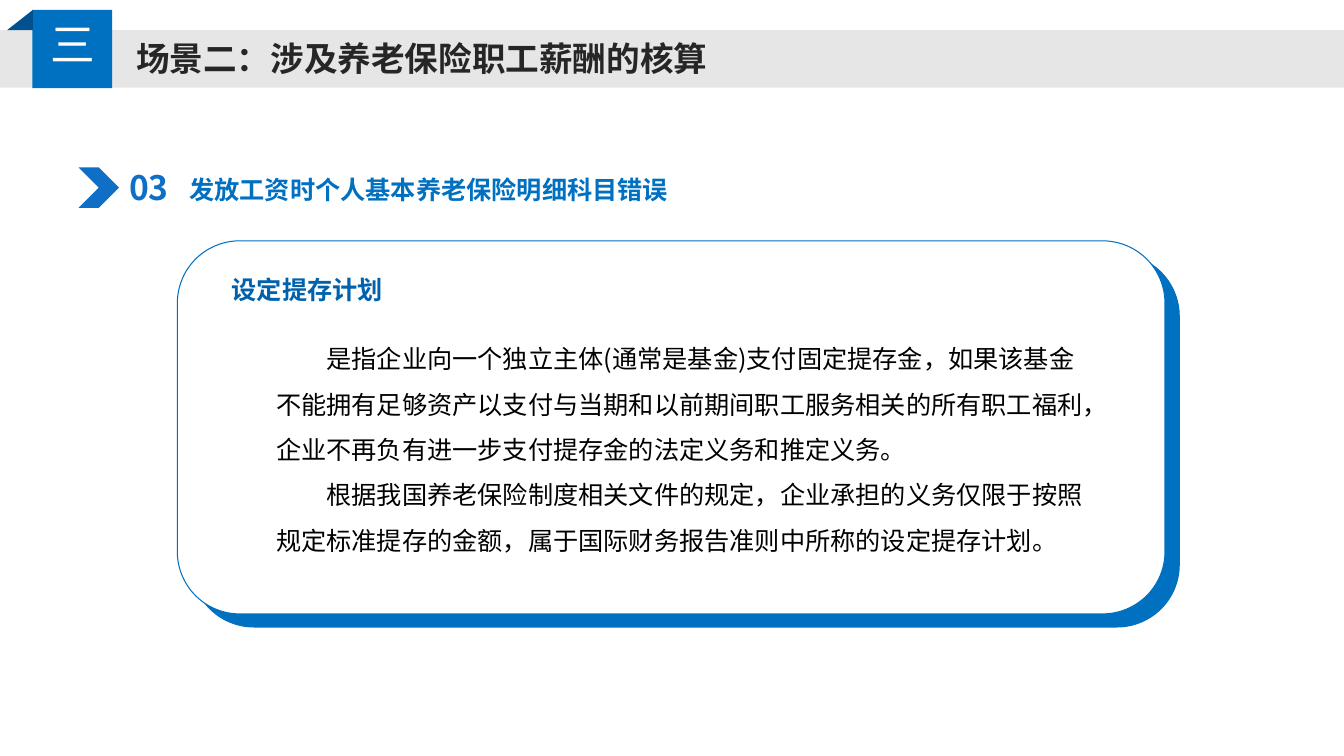
from lxml.etree import SubElement
from pptx import Presentation
from pptx.dml.color import RGBColor
from pptx.enum.shapes import MSO_SHAPE
from pptx.enum.text import MSO_ANCHOR, PP_ALIGN
from pptx.oxml.ns import qn
from pptx.util import Cm, Pt

COLORS = {
    "blue": "0070C0",
    "fold": "00518E",
    "accent": "0F6FC6",
    "heading": "0062AC",
    "bar": "E6E6E6",
    "title": "262626",
    "white": "FFFFFF",
    "black": "000000",
}


class SlideBuilder:
    """Draws styled shapes and text on one slide."""

    font = "Noto Sans CJK SC"

    def __init__(self, slide):
        self.shapes = slide.shapes

    def color(self, name):
        return RGBColor.from_string(COLORS[name])

    def paint(self, sp, fill, line=None):
        sp.shadow.inherit = False
        sp.fill.solid()
        sp.fill.fore_color.rgb = self.color(fill)
        if line:
            sp.line.color.rgb = self.color(line)
            sp.line.width = Pt(0.75)
        else:
            sp.line.fill.background()

    def shape(self, kind, box, fill, line=None):
        sp = self.shapes.add_shape(kind, *map(Cm, box))
        self.paint(sp, fill, line)
        return sp

    def polygon(self, points, fill):
        start, *rest = [(Cm(x), Cm(y)) for x, y in points]
        builder = self.shapes.build_freeform(*start)
        builder.add_line_segments(rest, close=True)
        self.paint(builder.convert_to_shape(), fill)

    def text(self, box, paragraphs, size, color, bold=False, wrap=True, spacing=None,
             after=None, indent=None, align=PP_ALIGN.LEFT, anchor=MSO_ANCHOR.TOP, font=None):
        tf = self.shapes.add_textbox(*map(Cm, box)).text_frame
        tf.word_wrap = wrap
        tf.vertical_anchor = anchor
        for i, content in enumerate(paragraphs):
            p = tf.add_paragraph() if i else tf.paragraphs[0]
            p.alignment = align
            if spacing:
                p.line_spacing = spacing
            if after:
                p.space_after = Pt(after)
            if indent:
                p._p.get_or_add_pPr().set("indent", str(Cm(indent)))
            r = p.add_run()
            r.text = content
            r.font.size = Pt(size)
            r.font.bold = bold
            r.font.color.rgb = self.color(color)
            r.font.name = font or self.font
            SubElement(r._r.get_or_add_rPr(), qn("a:ea"), typeface=font or self.font)


def main():
    prs = Presentation()
    prs.slide_width, prs.slide_height = Cm(33.87), Cm(19.05)
    s = SlideBuilder(prs.slides.add_slide(prs.slide_layouts[6]))

    s.shape(MSO_SHAPE.RECTANGLE, (0, 0.76, 33.87, 1.45), "bar")
    s.shape(MSO_SHAPE.RECTANGLE, (0.82, 0.25, 2.01, 1.97), "blue")
    s.polygon([(0.18, 0.76), (0.83, 0.25), (0.83, 0.76)], "fold")
    s.text((3.18, 0.84, 15.04, 1.27), ["场景二：涉及养老保险职工薪酬的核算"],
           24, "title", bold=True, wrap=False)
    s.text((1.02, 0.3, 1.65, 1.63), ["三"], 32, "white", wrap=False,
           font="Noto Sans CJK JP")

    for left, top, fill in ((4.83, 6.4, "blue"), (4.47, 6.07, "white")):
        card = s.shape(MSO_SHAPE.ROUNDED_RECTANGLE, (left, top, 24.89, 9.4), fill, "blue")
        card.adjustments[0] = 0.167

    s.text((5.59, 6.4, 22.83, 1.27), ["设定提存计划"], 18, "heading",
           bold=True, spacing=1.5)
    s.text((2.69, 3.71, 2.13, 2.01), ["03"], 24, "accent", bold=True,
           align=PP_ALIGN.CENTER, anchor=MSO_ANCHOR.MIDDLE)
    s.shape(MSO_SHAPE.CHEVRON, (1.98, 4.22, 1.02, 1.02), "accent")
    s.text((4.52, 4.04, 12.7, 1.24), ["发放工资时个人基本养老保险明细科目错误"],
           18, "blue", bold=True, wrap=False, spacing=1.3, after=6)
    s.text((6.71, 8.15, 21.03, 6.02), [
        "是指企业向一个独立主体(通常是基金)支付固定提存金，如果该基金不能拥有足够资产"
        "以支付与当期和以前期间职工服务相关的所有职工福利，企业不再负有进一步支付提存金的"
        "法定义务和推定义务。",
        "根据我国养老保险制度相关文件的规定，企业承担的义务仅限于按照规定标准提存的金额，"
        "属于国际财务报告准则中所称的设定提存计划。",
    ], 18, "black", spacing=1.5, indent=1.27)

    prs.save("out.pptx")


if __name__ == "__main__":
    main()
